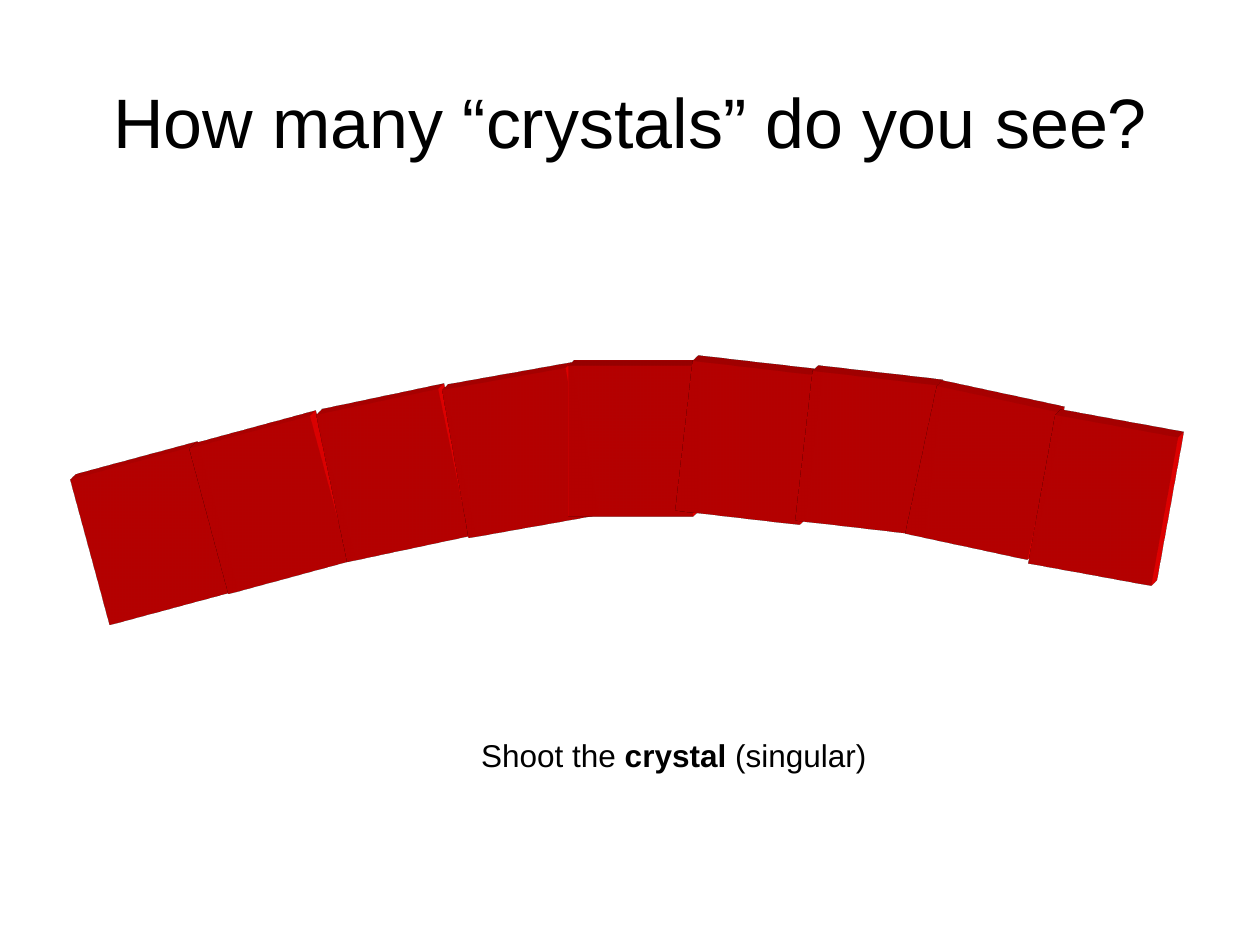
from dataclasses import dataclass

import lxml.etree
import pptx
import pptx.dml.color
import pptx.enum.shapes
import pptx.enum.text
import pptx.oxml
import pptx.oxml.ns
import pptx.util
from pptx.util import Inches

FONT = "Arial"
BLACK = "000000"
RED = "FF0000"
BLOCK_WIDTH, BLOCK_HEIGHT = 1.19, 0.99
BLOCK_DEPTH = 0.13


@dataclass
class Block:
    left: float
    top: float
    rotation: float


BLOCKS = [
    Block(0.6, 3.76, 74.9),
    Block(1.54, 3.51, 74.9),
    Block(2.52, 3.28, 78.1),
    Block(3.51, 3.1, 79.9),
    Block(4.41, 3.01, 90),
    Block(5.33, 3.02, 96.6),
    Block(6.28, 3.1, 96.6),
    Block(7.2, 3.26, 102.1),
    Block(8.16, 3.48, 100.3),
]


def color(value: str) -> pptx.dml.color.RGBColor:
    return pptx.dml.color.RGBColor.from_string(value)


def set_font(font, size: float) -> None:
    font.name = FONT
    font.size = pptx.util.Pt(size)
    font.color.rgb = color(BLACK)


def extrude(shape, depth: float, hex_color: str) -> None:
    """Give a shape solid depth towards the top right."""
    namespace = pptx.oxml.ns.nsdecls("a")
    for xml in (
        f'<a:scene3d {namespace}><a:camera prst="legacyObliqueTopRight"/>'
        '<a:lightRig rig="legacyFlat3" dir="b"/></a:scene3d>',
        f'<a:sp3d {namespace} extrusionH="{Inches(depth)}" prstMaterial="legacyMatte">'
        f'<a:extrusionClr><a:srgbClr val="{hex_color}"/></a:extrusionClr></a:sp3d>',
    ):
        shape.element.spPr.append(pptx.oxml.parse_xml(xml))


def draw_block(slide, block: Block) -> None:
    shape = slide.shapes.add_shape(
        pptx.enum.shapes.MSO_SHAPE.RECTANGLE,
        Inches(block.left), Inches(block.top),
        Inches(BLOCK_WIDTH), Inches(BLOCK_HEIGHT),
    )
    shape.rotation = block.rotation
    shape.shadow.inherit = False
    shape.fill.solid()
    shape.fill.fore_color.rgb = color(RED)
    shape.line.fill.background()
    extrude(shape, BLOCK_DEPTH, RED)


def main() -> None:
    presentation = pptx.Presentation()
    presentation.slide_width = Inches(10)
    presentation.slide_height = Inches(7.5)
    slide = presentation.slides.add_slide(presentation.slide_layouts[6])

    # Title
    title = slide.shapes.add_textbox(0, 0, Inches(10), Inches(1.92))
    title.text_frame.word_wrap = True
    title.text_frame.vertical_anchor = pptx.enum.text.MSO_ANCHOR.MIDDLE
    paragraph = title.text_frame.paragraphs[0]
    paragraph.text = "How many “crystals” do you see?"
    paragraph.alignment = pptx.enum.text.PP_ALIGN.CENTER
    set_font(paragraph.font, 40)

    # Arch of blocks
    for block in BLOCKS:
        draw_block(slide, block)

    # Caption
    caption = slide.shapes.add_textbox(Inches(3.72), Inches(5.79), Inches(3.29), Inches(0.4))
    caption.text_frame.word_wrap = False
    caption.text_frame.auto_size = pptx.enum.text.MSO_AUTO_SIZE.SHAPE_TO_FIT_TEXT
    paragraph = caption.text_frame.paragraphs[0]
    set_font(paragraph.font, 18)
    for text, bold in (("Shoot the ", False), ("crystal", True), (" (singular)", False)):
        run = paragraph.add_run()
        run.text = text
        run.font.bold = bold

    presentation.save("out.pptx")


if __name__ == "__main__":
    main()
